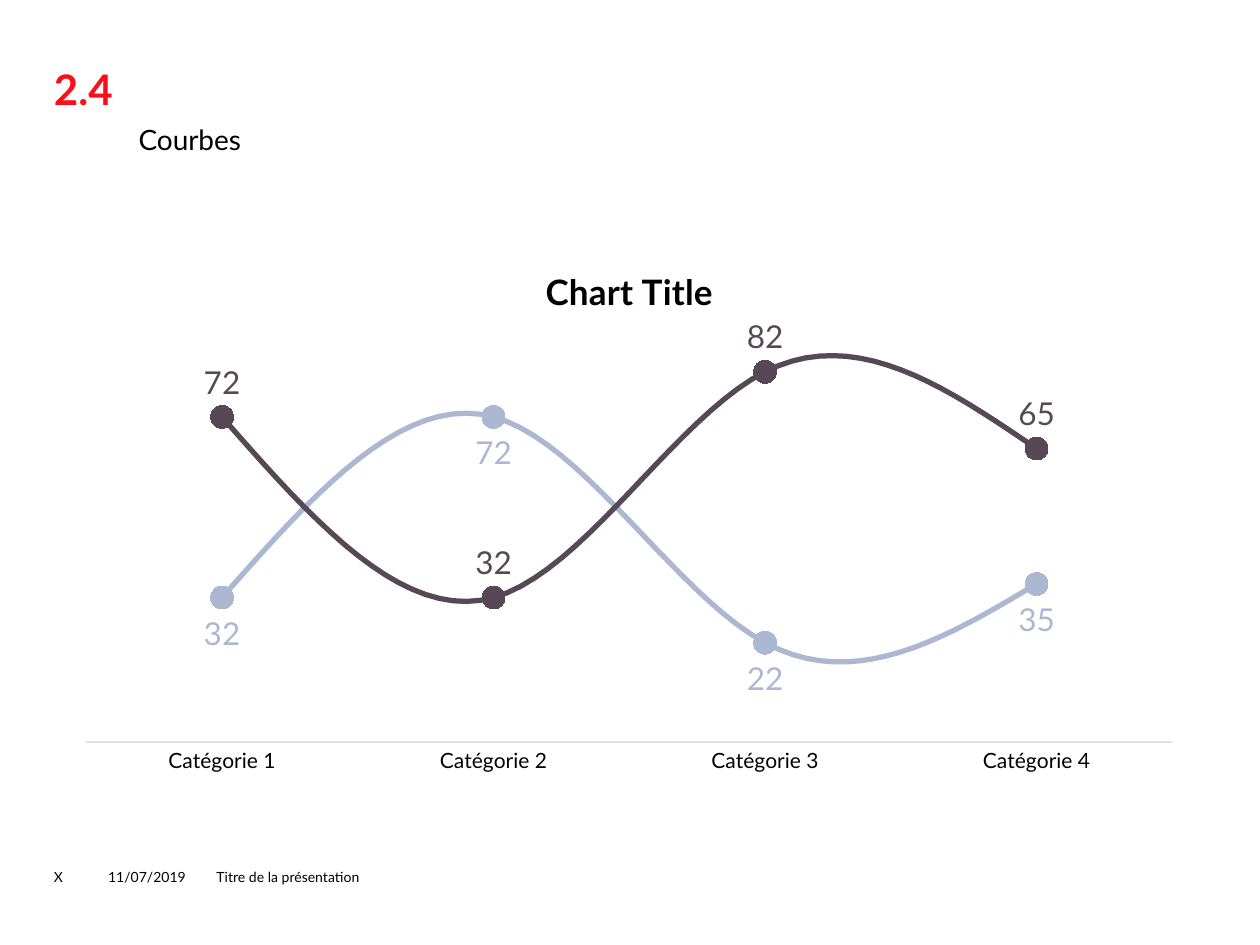
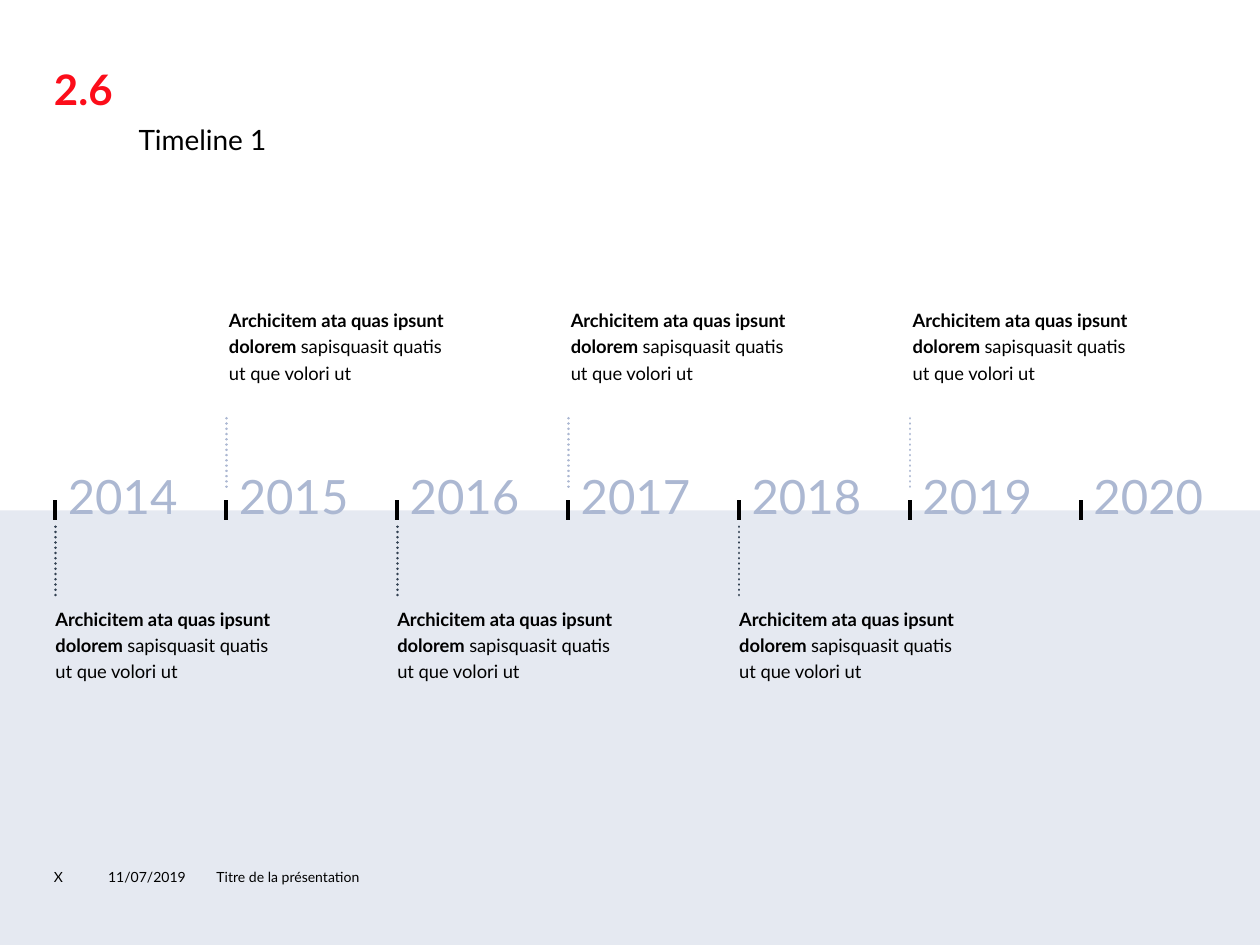
from lxml import etree
from pptx import Presentation
from pptx import util as u
from pptx.chart.data import CategoryChartData
from pptx.dml.color import RGBColor
from pptx.enum import chart as ch, dml, shapes, text
from pptx.oxml import ns, parse_xml

FONT = "Lato"
BLACK, RED = "000000", "FC0D1A"
PERIWINKLE, PLUM, NAVY, RULE = "ACB8D2", "574855", "314051", "DBE2EA"
INSETS = (0.1, 0.05, 0.1, 0.05)
FOOTER = [("X", 0.33, 0.43), ("11/07/2019", 0.76, 0.87),
          ("Titre de la présentation", 1.62, 8.04)]
CURVES = [("Series 1", (32, 72, 22, 35), PERIWINKLE, ch.XL_LABEL_POSITION.BELOW),
          ("Series 2", (72, 32, 82, 65), PLUM, ch.XL_LABEL_POSITION.ABOVE)]
YEARS = range(2014, 2021)
FIRST_TICK, LAST_TICK = 0.44, 8.58
CAPTION = [("Archicitem ata quas ipsunt dolorem ", True),
           ("sapisquasit quatis ut que volori ut", False)]


def rgb(value):
    """Turn a hex string into a colour."""
    return RGBColor.from_string(value)


def set_font(font, size, color, bold=False):
    """Apply the deck's typeface with a size, colour and weight."""
    font.name, font.size, font.bold = FONT, u.Pt(size), bold
    font.color.rgb = rgb(color)


def add_text(slide, box, runs, size, color=BLACK, insets=INSETS,
             middle=False, spacing=1.0):
    """Add a wrapped text box holding one paragraph of (words, bold) runs."""
    frame = slide.shapes.add_textbox(*map(u.Inches, box)).text_frame
    frame.word_wrap = True
    (frame.margin_left, frame.margin_top,
     frame.margin_right, frame.margin_bottom) = map(u.Inches, insets)
    frame.vertical_anchor = text.MSO_ANCHOR.MIDDLE if middle else text.MSO_ANCHOR.TOP
    paragraph = frame.paragraphs[0]
    paragraph.line_spacing = spacing
    for words, bold in runs:
        run = paragraph.add_run()
        run.text = words
        set_font(run.font, size, color, bold)


def add_band(slide, box, color, opacity):
    """Add a translucent rectangle without outline."""
    band = slide.shapes.add_shape(shapes.MSO_SHAPE.RECTANGLE, *map(u.Inches, box))
    band.shadow.inherit = False
    band.fill.solid()
    band.fill.fore_color.rgb = rgb(color)
    band.line.fill.background()
    tint = band._element.spPr.find(".//" + ns.qn("a:srgbClr"))
    etree.SubElement(tint, ns.qn("a:alpha"), val=str(opacity * 1000))


def add_vertical(slide, x, top, bottom, color, width, dotted=False):
    """Add a vertical line, solid or with round dots."""
    line = slide.shapes.add_connector(
        shapes.MSO_CONNECTOR.STRAIGHT, *map(u.Inches, (x, top, x, bottom)))
    line.line.color.rgb = rgb(color)
    line.line.width = u.Pt(width)
    properties = line._element.spPr
    if dotted:
        line.line.dash_style = dml.MSO_LINE.ROUND_DOT
        properties.find(ns.qn("a:ln")).set("cap", "rnd")
    etree.SubElement(properties, ns.qn("a:effectLst"))


def add_heading(slide, number, title):
    """Add the section number and the slide title."""
    add_text(slide, (0.33, 0.5, 0.65, 0.41), [(number, True)], 24, RED,
             insets=(0.1, 0.05, 0, 0.05), spacing=0.9)
    add_text(slide, (0.99, 0.92, 8.08, 0.37), [(title, False)], 16,
             insets=(0.11, 0.05, 0.1, 0.05), middle=True)


def add_footer(slide):
    """Add page mark, date and presentation title."""
    for words, left, width in FOOTER:
        add_text(slide, (left, 6.76, width, 0.4), [(words, False)], 8, middle=True)


def place_plot(chart, x, y, width, height):
    """Fix the inner plot area as fractions of the chart."""
    area = chart._chartSpace.chart.plotArea
    for old in area.findall(ns.qn("c:layout")):
        area.remove(old)
    area.insert(0, parse_xml(
        f'<c:layout {ns.nsdecls("c")}><c:manualLayout><c:layoutTarget val="inner"/>'
        '<c:xMode val="edge"/><c:yMode val="edge"/>'
        f'<c:x val="{x}"/><c:y val="{y}"/><c:w val="{width}"/><c:h val="{height}"/>'
        '</c:manualLayout></c:layout>'))


def style_curve(curve, color, label_position):
    """Style a smooth curve with its markers and value labels."""
    curve.smooth = True
    curve.format.line.color.rgb = rgb(color)
    curve.format.line.width = u.Pt(3)
    marker = curve.marker
    marker.style, marker.size = ch.XL_MARKER_STYLE.CIRCLE, 13
    marker.format.fill.solid()
    marker.format.fill.fore_color.rgb = rgb(color)
    marker.format.line.color.rgb = rgb(color)
    labels = curve.data_labels
    labels.show_value = True
    labels.position = label_position
    set_font(labels.font, 18, color)


def add_curves(slide):
    """Add the line chart with its title and axes."""
    data = CategoryChartData()
    data.categories = [f"Catégorie {i}" for i in range(1, 5)]
    for name, values, _, _ in CURVES:
        data.add_series(name, values)
    chart = slide.shapes.add_chart(
        ch.XL_CHART_TYPE.LINE_MARKERS,
        *map(u.Inches, (0.57, 1.92, 8.85, 4.33)), data).chart
    set_font(chart.font, 10, NAVY)
    chart.has_legend = False
    chart.has_title = True
    heading = chart.chart_title.text_frame.paragraphs[0].add_run()
    heading.text = "Chart Title"
    set_font(heading.font, 20, BLACK, True)
    chart.plots[0].vary_by_categories = False
    for curve, (_, _, color, position) in zip(chart.plots[0].series, CURVES):
        style_curve(curve, color, position)
    values = chart.value_axis
    values.visible = values.has_major_gridlines = False
    values.minimum_scale, values.maximum_scale = 0, 90
    categories = chart.category_axis
    categories.major_tick_mark = ch.XL_TICK_MARK.NONE
    categories.format.line.color.rgb = rgb(RULE)
    categories.format.line.width = u.Pt(0.75)
    set_font(categories.tick_labels.font, 12, BLACK)
    place_plot(chart, 0.013, 0.172, 0.974, 0.745)


def add_timeline(slide):
    """Add the years, with captions alternating below and above the axis."""
    step = (LAST_TICK - FIRST_TICK) / (len(YEARS) - 1)
    for i, year in enumerate(YEARS):
        x = FIRST_TICK + i * step
        add_vertical(slide, x, 3.97, 4.13, BLACK, 2.25)
        add_text(slide, (x, 3.66, 1.16, 0.56), [(str(year), False)], 27, PERIWINKLE)
        if year == YEARS[-1]:
            continue
        if i % 2:
            leader, left, top = (3.32, 3.88, PERIWINKLE), x - 0.15, 2.37
        else:
            leader, left, top = (4.18, 4.73, NAVY), x - 0.17, 4.74
        add_vertical(slide, x, *leader, 1.5, dotted=True)
        add_text(slide, (left, top, 2.09, 0.93), CAPTION, 10.5,
                 insets=(0.17, 0.05, 0.1, 0.05), spacing=1.2)


def main():
    """Build the two slides and save the deck."""
    deck = Presentation()
    deck.slide_width, deck.slide_height = u.Inches(10), u.Inches(7.5)
    blank = deck.slide_layouts[6]

    curves = deck.slides.add_slide(blank)
    add_footer(curves)
    add_heading(curves, "2.4", "Courbes")
    add_curves(curves)

    timeline = deck.slides.add_slide(blank)
    add_band(timeline, (0, 4.05, 10, 3.45), PERIWINKLE, 30)
    add_footer(timeline)
    add_heading(timeline, "2.6", "Timeline 1")
    add_timeline(timeline)
    deck.save("out.pptx")


if __name__ == "__main__":
    main()
